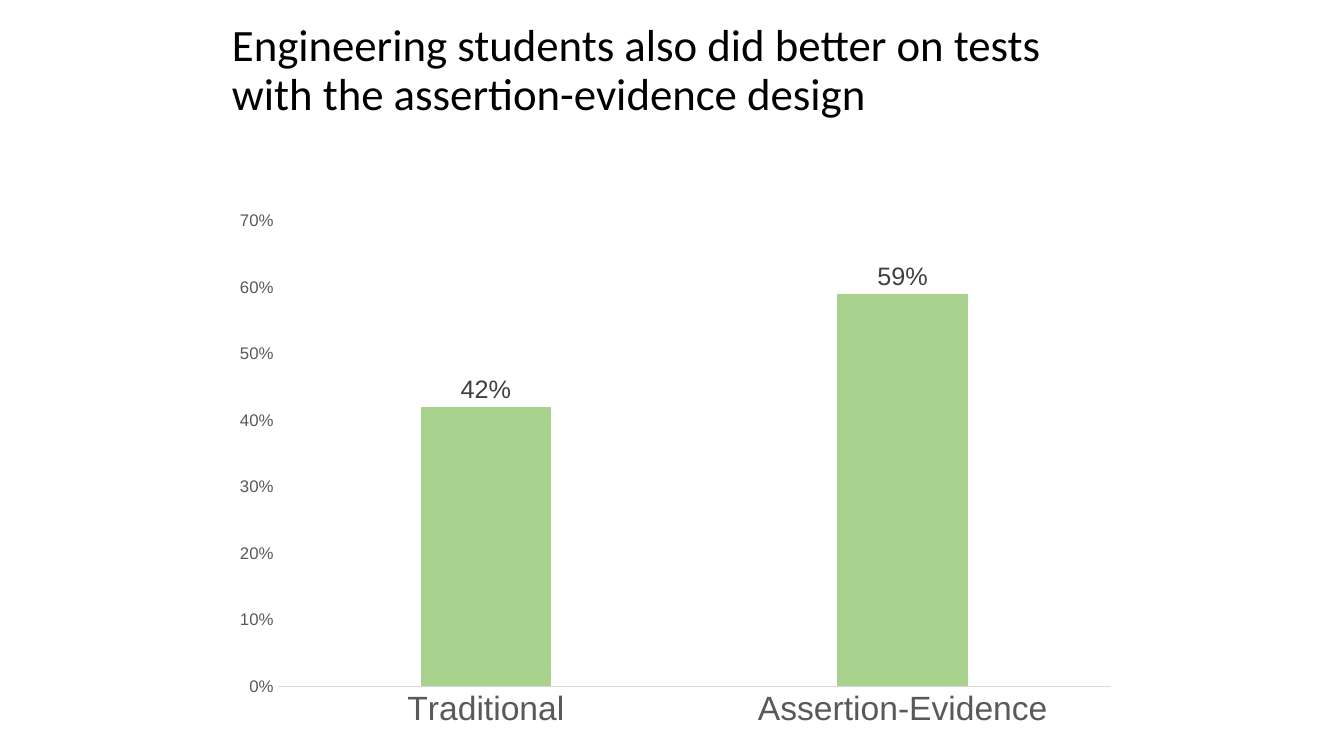
import pptx
import pptx.chart.data
import pptx.dml.color
import pptx.enum.chart
import pptx.enum.text
import pptx.util

PX = 9144  # EMU, 100 px to the inch
RGB = pptx.dml.color.RGBColor
BLACK = RGB(0x00, 0x00, 0x00)
DARK = RGB(0x40, 0x40, 0x40)
GREY = RGB(0x59, 0x59, 0x59)
PALE = RGB(0xD9, 0xD9, 0xD9)
GREEN = RGB(0xA9, 0xD1, 0x8E)


def style(font, name, size, color):
    font.name = name
    font.size = pptx.util.Pt(size)
    font.color.rgb = color


def apply(item, form):
    for key, value in form.items():
        setattr(item, key, value)


deck = pptx.Presentation()
deck.slide_width = 1333 * PX
deck.slide_height = 750 * PX
slide = deck.slides.add_slide(deck.slide_layouts[5])

# Title
title = slide.shapes.title
apply(title, {"left": 220 * PX, "top": 17 * PX,
              "width": 900 * PX, "height": 108 * PX})
frame = title.text_frame
apply(frame, {
    "text": "Engineering students also did better on tests "
            "with the assertion-evidence design",
    "word_wrap": True,
    "auto_size": pptx.enum.text.MSO_AUTO_SIZE.NONE,
    "vertical_anchor": pptx.enum.text.MSO_ANCHOR.MIDDLE,
    "margin_left": 10 * PX, "margin_right": 10 * PX,
    "margin_top": 5 * PX, "margin_bottom": 5 * PX,
})
line = frame.paragraphs[0]
apply(line, {"alignment": pptx.enum.text.PP_ALIGN.LEFT, "line_spacing": 0.9})
style(line.runs[0].font, "Calibri", 32, BLACK)

# Test scores
data = pptx.chart.data.CategoryChartData(number_format="0%")
data.categories = ["Traditional", "Assertion-Evidence"]
data.add_series("Series 1", [0.42, 0.59])
chart = slide.shapes.add_chart(
    pptx.enum.chart.XL_CHART_TYPE.COLUMN_CLUSTERED,
    220 * PX, 200 * PX, 900 * PX, 533 * PX, data).chart
apply(chart, {"has_legend": False, "has_title": False})
style(chart.font, "Arial", 10, BLACK)

plot = chart.plots[0]
apply(plot, {"gap_width": 219, "overlap": -27,
             "vary_by_categories": False, "has_data_labels": True})
fill = plot.series[0].format.fill
fill.solid()
fill.fore_color.rgb = GREEN
labels = plot.data_labels
apply(labels, {
    "show_value": True, "number_format": "0%",
    "number_format_is_linked": False,
    "position": pptx.enum.chart.XL_LABEL_POSITION.OUTSIDE_END,
})
style(labels.font, "Arial", 18, DARK)

# Axes
names, scale = chart.category_axis, chart.value_axis
none = pptx.enum.chart.XL_TICK_MARK.NONE
for axis, size in ((names, 24), (scale, 12)):
    apply(axis, {"has_major_gridlines": False,
                 "major_tick_mark": none, "minor_tick_mark": none})
    style(axis.tick_labels.font, "Arial", size, GREY)
names.format.line.color.rgb = PALE
names.format.line.width = pptx.util.Pt(0.75)
scale.format.line.fill.background()
apply(scale, {"minimum_scale": 0, "maximum_scale": 0.7, "major_unit": 0.1})
apply(scale.tick_labels, {"number_format": "0%",
                          "number_format_is_linked": False})

deck.save("out.pptx")
